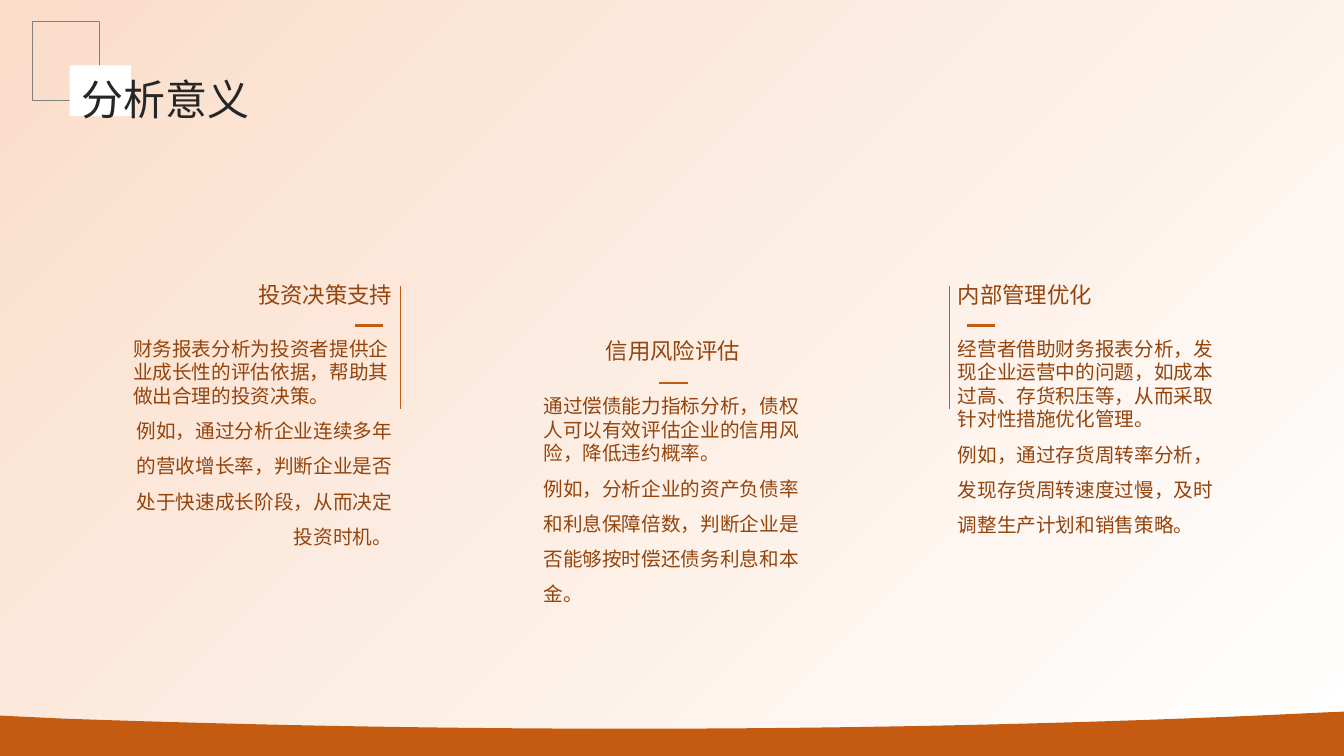
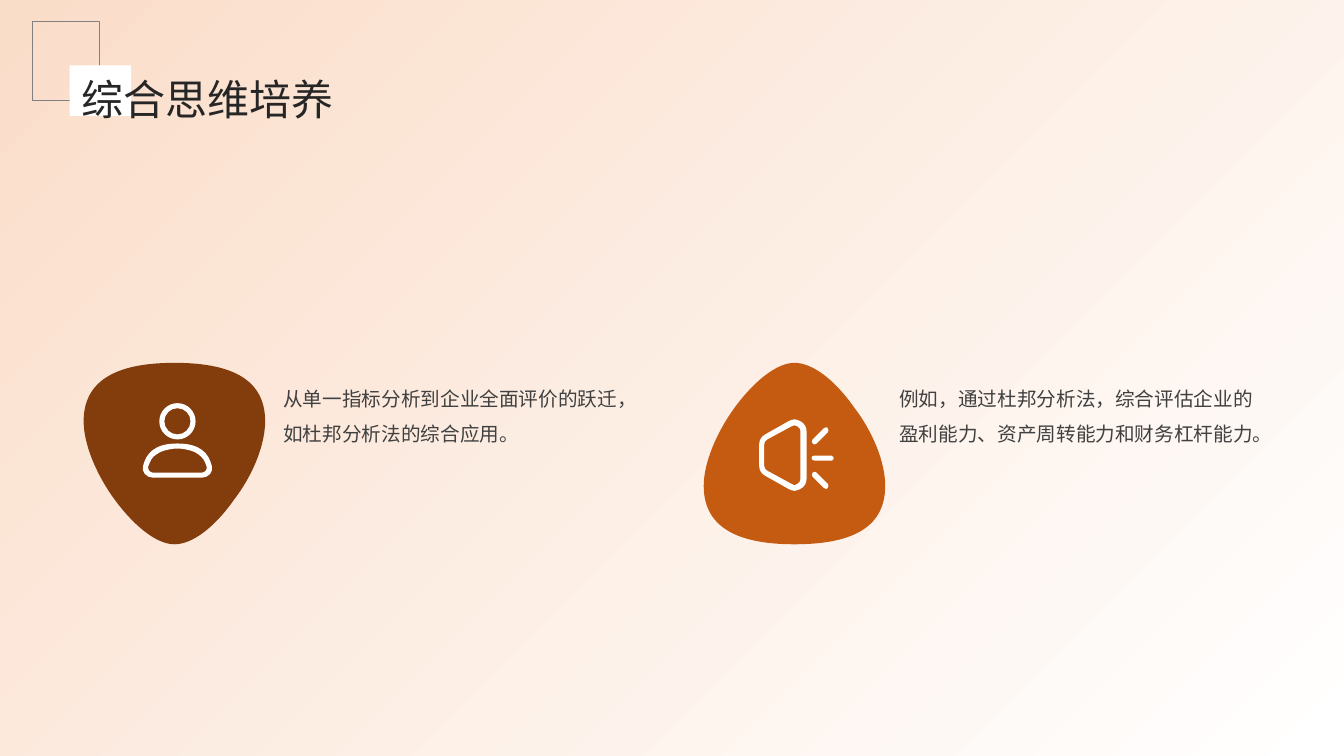
"""Build two slides on why statements are analysed and on joined-up thinking."""
from dataclasses import dataclass

from lxml.etree import SubElement
from pptx import Presentation
from pptx.dml.color import RGBColor
from pptx.enum.shapes import MSO_CONNECTOR, MSO_SHAPE
from pptx.enum.text import MSO_ANCHOR, MSO_AUTO_SIZE, PP_ALIGN
from pptx.oxml.ns import qn
from pptx.presentation import Presentation as Deck
from pptx.shapes.autoshape import Shape
from pptx.slide import Slide
from pptx.text.text import TextFrame
from pptx.util import Inches, Pt

Segment = tuple[float, ...]
Point = tuple[float, float]


@dataclass(frozen=True)
class Theme:
    font: str = "Noto Sans CJK SC"
    white: str = "FFFFFF"
    peach: str = "FADDC9"
    orange: str = "C55A11"
    brown: str = "833C0B"
    rust: str = "94440D"
    grey: str = "808080"
    title_ink: str = "262626"
    text_ink: str = "404040"
    title_size: int = 30
    heading_size: int = 16
    body_size: int = 14
    hairline: float = 0.75
    dash: float = 2


@dataclass(frozen=True)
class Frame:
    left: float
    top: float
    width: float
    height: float


@dataclass(frozen=True)
class Outline:
    start: Point
    segments: tuple[Segment, ...]

    def flipped(self, top: float, bottom: float) -> "Outline":
        """Return the outline turned upside down between two heights."""
        total = top + bottom
        turned = tuple(tuple(total - value if index % 2 else value
                             for index, value in enumerate(segment))
                       for segment in self.segments)
        return Outline((self.start[0], total - self.start[1]), turned)


@dataclass(frozen=True)
class Column:
    heading: str
    statement: str
    example: str
    left: float
    heading_top: float
    body_top: float
    align: PP_ALIGN
    dash_left: float
    rule_x: float | None = None


@dataclass(frozen=True)
class Card:
    text: str
    text_left: float
    badge_left: float
    badge: Outline
    color: str
    icon: tuple[Outline, ...]


def ring(x: float, y: float, radius: float) -> Outline:
    """Return a circle made of four curves."""
    k = radius * 0.55
    left, right, top, bottom = x - radius, x + radius, y - radius, y + radius
    return Outline((x, top), (
        (x + k, top, right, y - k, right, y), (right, y + k, x + k, bottom, x, bottom),
        (x - k, bottom, left, y + k, left, y), (left, y - k, x - k, top, x, top)))


THEME = Theme()
PAGE = Frame(0, 0, 13.33, 7.5)
COLUMN_WIDTH = 2.57
BADGE_TOP, BADGE_SIZE = 3.6, 1.8

WAVE = Outline((13.33, 7.06), (
    (13.33, 7.5), (0, 7.5), (0, 7.1), (0.63, 7.13),
    (2.35, 7.19, 4.25, 7.23, 6.24, 7.23), (8.72, 7.23, 11.06, 7.17, 13.1, 7.07)))
BADGE = Outline((0.9, 0), (
    (0.3, 0, 0, 0.19, 0, 0.58), (0, 0.8, 0.12, 1.1, 0.31, 1.36),
    (0.51, 1.63, 0.73, 1.8, 0.9, 1.8), (1.08, 1.8, 1.3, 1.63, 1.49, 1.36),
    (1.69, 1.1, 1.8, 0.8, 1.8, 0.58), (1.8, 0.19, 1.51, 0, 0.9, 0)))
PERSON = (
    ring(1.76, 4.18, 0.13),
    ring(1.76, 4.18, 0.18),
    Outline((1.76, 4.45), (
        (1.81, 4.45, 1.85, 4.46, 1.89, 4.47), (1.92, 4.48, 1.95, 4.49, 1.97, 4.51),
        (1.99, 4.52, 2, 4.54, 2.02, 4.56), (2.03, 4.58, 2.04, 4.6, 2.05, 4.63),
        (2.05, 4.65, 2.05, 4.66, 2.04, 4.67), (2.03, 4.68, 2.02, 4.69, 2, 4.69),
        (1.52, 4.69), (1.5, 4.69, 1.49, 4.68, 1.48, 4.67),
        (1.47, 4.66, 1.47, 4.65, 1.47, 4.63), (1.48, 4.6, 1.49, 4.58, 1.5, 4.56),
        (1.51, 4.54, 1.53, 4.52, 1.55, 4.51), (1.57, 4.49, 1.6, 4.48, 1.63, 4.47),
        (1.67, 4.46, 1.71, 4.45, 1.76, 4.45))),
    Outline((1.76, 4.4), (
        (1.53, 4.4, 1.45, 4.5, 1.42, 4.62), (1.4, 4.68, 1.45, 4.74, 1.52, 4.74),
        (2, 4.74), (2.07, 4.74, 2.12, 4.68, 2.1, 4.62),
        (2.07, 4.5, 1.99, 4.4, 1.76, 4.4))),
)
LOWER_RAY = Outline((8.08, 4.68), (
    (8.09, 4.68, 8.09, 4.68, 8.1, 4.69), (8.21, 4.8),
    (8.22, 4.81, 8.22, 4.83, 8.21, 4.84), (8.21, 4.85, 8.2, 4.85, 8.19, 4.85),
    (8.18, 4.85, 8.18, 4.85, 8.17, 4.84), (8.06, 4.73),
    (8.05, 4.72, 8.05, 4.7, 8.06, 4.69), (8.07, 4.68, 8.07, 4.68, 8.08, 4.68)))
HORN = (
    LOWER_RAY,
    Outline((8.08, 4.52), (
        (8.25, 4.52), (8.26, 4.52, 8.27, 4.53, 8.27, 4.54),
        (8.27, 4.56, 8.26, 4.57, 8.25, 4.57), (8.08, 4.57),
        (8.06, 4.57, 8.05, 4.56, 8.05, 4.54), (8.05, 4.53, 8.06, 4.52, 8.08, 4.52))),
    LOWER_RAY.flipped(4.24, 4.85),
    Outline((7.88, 4.22), (
        (7.87, 4.22, 7.86, 4.22, 7.85, 4.23), (7.61, 4.36),
        (7.59, 4.37, 7.58, 4.39, 7.58, 4.41), (7.58, 4.62),
        (7.58, 4.64, 7.59, 4.66, 7.61, 4.67), (7.85, 4.8),
        (7.87, 4.82, 7.89, 4.82, 7.91, 4.8), (7.93, 4.79, 7.94, 4.77, 7.94, 4.75),
        (7.94, 4.28), (7.94, 4.26, 7.93, 4.24, 7.91, 4.23),
        (7.9, 4.22, 7.89, 4.22, 7.88, 4.22))),
    Outline((7.88, 4.16), (
        (7.9, 4.16, 7.92, 4.17, 7.94, 4.18), (7.98, 4.2, 8, 4.24, 8, 4.28),
        (8, 4.75), (8, 4.79, 7.98, 4.83, 7.94, 4.85),
        (7.92, 4.86, 7.9, 4.87, 7.88, 4.87), (7.86, 4.87, 7.84, 4.86, 7.82, 4.85),
        (7.59, 4.72), (7.55, 4.7, 7.53, 4.66, 7.53, 4.62), (7.53, 4.41),
        (7.53, 4.37, 7.55, 4.33, 7.59, 4.31), (7.82, 4.18),
        (7.84, 4.17, 7.86, 4.16, 7.88, 4.16))),
)

COLUMNS = (
    Column("投资决策支持",
           "财务报表分析为投资者提供企业成长性的评估依据，帮助其做出合理的投资决策。",
           "例如，通过分析企业连续多年的营收增长率，判断企业是否处于快速成长阶段，从而决定投资时机。",
           1.32, 2.58, 3.34, PP_ALIGN.RIGHT, 3.52, 3.97),
    Column("信用风险评估",
           "通过偿债能力指标分析，债权人可以有效评估企业的信用风险，降低违约概率。",
           "例如，分析企业的资产负债率和利息保障倍数，判断企业是否能够按时偿还债务利息和本金。",
           5.39, 3.13, 3.91, PP_ALIGN.CENTER, 6.54),
    Column("内部管理优化",
           "经营者借助财务报表分析，发现企业运营中的问题，如成本过高、存货积压等，从而采取针对性措施优化管理。",
           "例如，通过存货周转率分析，发现存货周转速度过慢，及时调整生产计划和销售策略。",
           9.5, 2.58, 3.34, PP_ALIGN.LEFT, 9.59, 9.42),
)
CARDS = (
    Card("从单一指标分析到企业全面评价的跃迁，如杜邦分析法的综合应用。",
         2.81, 0.83, BADGE, THEME.brown, PERSON),
    Card("例如，通过杜邦分析法，综合评估企业的盈利能力、资产周转能力和财务杠杆能力。",
         8.92, 6.98, BADGE.flipped(0, BADGE_SIZE), THEME.orange, HORN),
)


def rgb(color: str) -> RGBColor:
    """Turn a hex string into a colour."""
    return RGBColor.from_string(color)


def paint(shape: Shape, fill: str | None = None, line: str | None = None) -> None:
    """Set the fill and line of a shape and remove its shadow."""
    shape.shadow.inherit = False
    if fill:
        shape.fill.solid()
        shape.fill.fore_color.rgb = rgb(fill)
    else:
        shape.fill.background()
    if line:
        shape.line.color.rgb = rgb(line)
        shape.line.width = Pt(THEME.hairline)
    else:
        shape.line.fill.background()


def add_rectangle(page: Slide, frame: Frame) -> Shape:
    """Add a rectangle in a frame."""
    return page.shapes.add_shape(MSO_SHAPE.RECTANGLE, Inches(frame.left), Inches(frame.top),
                                 Inches(frame.width), Inches(frame.height))


def add_outlines(page: Slide, outlines: tuple[Outline, ...], color: str,
                 left: float = 0, top: float = 0) -> None:
    """Add one filled freeform of closed outlines with true curves."""
    builder = page.shapes.build_freeform(Inches(left + outlines[0].start[0]),
                                         Inches(top + outlines[0].start[1]))
    for index, outline in enumerate(outlines):
        if index:
            builder.move_to(Inches(left + outline.start[0]), Inches(top + outline.start[1]))
        builder.add_line_segments(
            [(Inches(left + x), Inches(top + y)) for segment in outline.segments
             for x, y in zip(segment[::2], segment[1::2])], close=True)
    shape = builder.convert_to_shape()
    nodes = iter(list(shape.element.iter(qn("a:lnTo"))))
    for outline in outlines:
        for segment in outline.segments:
            first, *others = [next(nodes) for _ in segment[::2]]
            if others:
                first.tag = qn("a:cubicBezTo")
            for node in others:
                first.append(node[0])
                node.getparent().remove(node)
    paint(shape, color)


def add_line(page: Slide, start: Point, end: Point, weight: float) -> None:
    """Add a straight accent line."""
    line = page.shapes.add_connector(MSO_CONNECTOR.STRAIGHT, Inches(start[0]), Inches(start[1]),
                                     Inches(end[0]), Inches(end[1]))
    line.line.color.rgb = rgb(THEME.orange)
    line.line.width = Pt(weight)
    SubElement(line.element.find(qn("p:spPr")), qn("a:effectLst"))


def style_text(shape: Shape, size: int, color: str, align: PP_ALIGN = PP_ALIGN.LEFT,
               spacing: float = 1.5, anchor: MSO_ANCHOR = MSO_ANCHOR.TOP) -> TextFrame:
    """Format all the text of a shape and return its frame."""
    frame = shape.text_frame
    frame.word_wrap = True
    frame.vertical_anchor = anchor
    frame.margin_left = frame.margin_right = frame.margin_top = frame.margin_bottom = 0
    for para in frame.paragraphs:
        para.alignment = align
        para.line_spacing = spacing
        for span in para.runs:
            span.font.name = THEME.font
            span.font.size = Pt(size)
            span.font.color.rgb = rgb(color)
    for properties in shape.element.iter(qn("a:rPr")):
        SubElement(properties, qn("a:ea")).set("typeface", THEME.font)
    return frame


def add_text(page: Slide, text: str, frame: Frame, size: int, color: str,
             align: PP_ALIGN = PP_ALIGN.LEFT,
             anchor: MSO_ANCHOR = MSO_ANCHOR.TOP) -> TextFrame:
    """Add a wrapped text box and return its frame."""
    box = page.shapes.add_textbox(Inches(frame.left), Inches(frame.top),
                                  Inches(frame.width), Inches(frame.height))
    box.text_frame.text = text
    return style_text(box, size, color, align, anchor=anchor)


def add_page(deck: Deck, heading: str, wave: bool = False) -> Slide:
    """Add a slide with the shared backdrop, title mark and title."""
    page = deck.slides.add_slide(deck.slide_layouts[5])
    backdrop = add_rectangle(page, PAGE)
    paint(backdrop)
    backdrop.fill.gradient()
    backdrop.fill.gradient_angle = 135
    for stop, color, position in zip(backdrop.fill.gradient_stops,
                                     (THEME.white, THEME.peach), (0, 1)):
        stop.color.rgb = rgb(color)
        stop.position = position
    if wave:
        add_outlines(page, (WAVE,), THEME.orange)
    paint(add_rectangle(page, Frame(0.32, 0.21, 0.67, 0.79)), line=THEME.grey)
    paint(add_rectangle(page, Frame(0.69, 0.65, 0.61, 0.5)), THEME.white)
    title = page.shapes.title
    title.left, title.top = Inches(0.81), Inches(0.68)
    title.width, title.height = Inches(11.1), Inches(0.46)
    title.text_frame.text = heading
    frame = style_text(title, THEME.title_size, THEME.title_ink, spacing=1.1)
    frame.auto_size = MSO_AUTO_SIZE.SHAPE_TO_FIT_TEXT
    title.element.getparent().append(title.element)
    return page


def draw_column(page: Slide, column: Column) -> None:
    """Draw a heading, its dash and side rule, and the body below."""
    top = column.body_top
    add_line(page, (column.dash_left, top - 0.11), (column.dash_left + 0.28, top - 0.11),
             THEME.dash)
    if column.rule_x is not None:
        add_line(page, (column.rule_x, top - 0.5), (column.rule_x, top + 0.72), THEME.hairline)
    add_text(page, column.heading, Frame(column.left, column.heading_top, COLUMN_WIDTH, 0.56),
             THEME.heading_size, THEME.rust, column.align, MSO_ANCHOR.MIDDLE)
    body_align = PP_ALIGN.LEFT if column.align == PP_ALIGN.CENTER else column.align
    body = add_text(page, f"{column.statement}\n{column.example}",
                    Frame(column.left, top, COLUMN_WIDTH, 2.95),
                    THEME.body_size, THEME.rust, body_align)
    body.paragraphs[0].alignment = PP_ALIGN.LEFT
    body.paragraphs[0].line_spacing = 1.0


def main() -> None:
    """Build and save the deck."""
    deck = Presentation()
    deck.slide_width, deck.slide_height = Inches(PAGE.width), Inches(PAGE.height)
    meaning = add_page(deck, "分析意义", wave=True)
    for column in COLUMNS:
        draw_column(meaning, column)
    thinking = add_page(deck, "综合思维培养")
    for card in CARDS:
        add_text(thinking, card.text, Frame(card.text_left, 3.72, 3.54, 1.8),
                 THEME.body_size, THEME.text_ink)
        add_outlines(thinking, (card.badge,), card.color, card.badge_left, BADGE_TOP)
        add_outlines(thinking, card.icon, THEME.white)
    deck.save("out.pptx")


if __name__ == "__main__":
    main()
